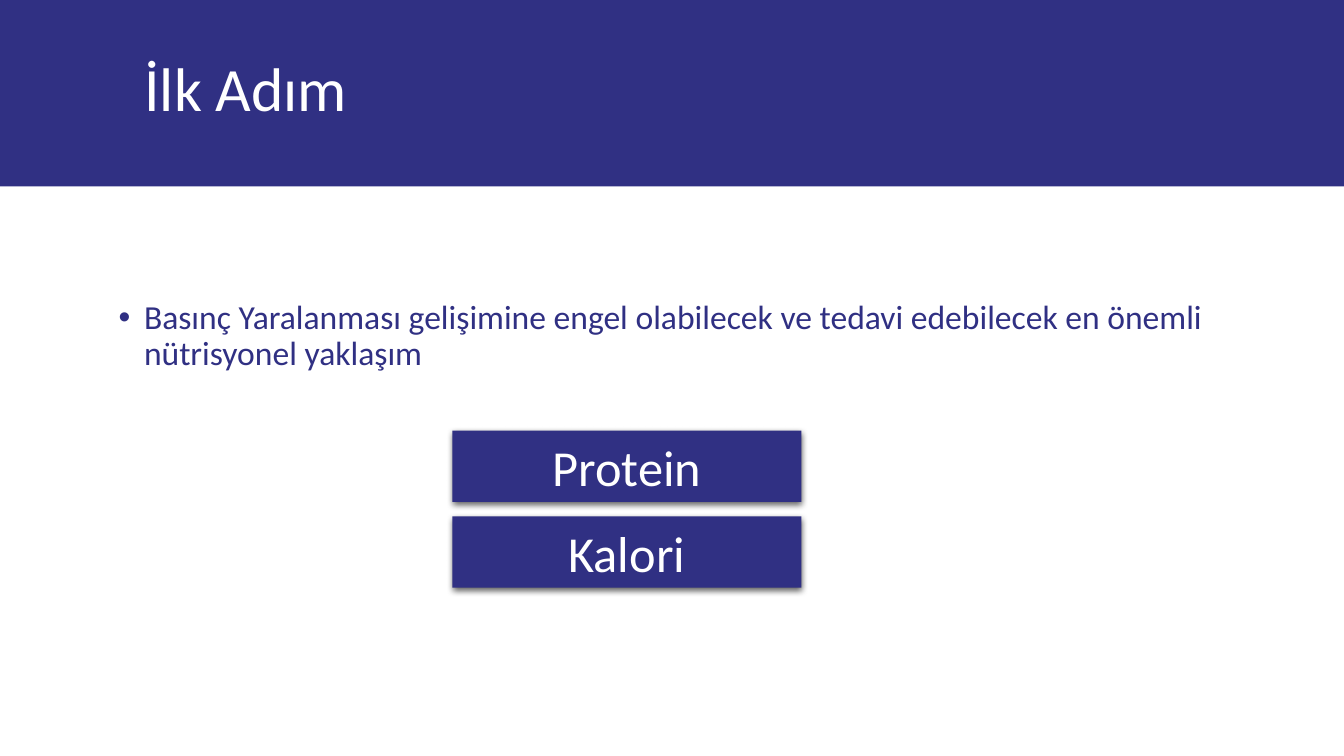
from lxml import etree
from pptx import Presentation
from pptx import util as u
from pptx.dml.color import RGBColor
from pptx.enum import shapes, text
from pptx.oxml import ns

NAVY = "303083"
WHITE = "FFFFFF"


def color(value):
    return RGBColor.from_string(value)


def style(paragraph, size, value):
    paragraph.font.name = "Calibri"
    paragraph.font.size = u.Pt(size)
    paragraph.font.color.rgb = color(value)


deck = Presentation()
deck.slide_width, deck.slide_height = u.Cm(33.87), u.Cm(19.05)
slide = deck.slides.add_slide(deck.slide_layouts[5])

heading = slide.shapes.title
heading.left, heading.top = u.Cm(0), u.Cm(0)
heading.width, heading.height = deck.slide_width, u.Cm(4.7)
heading.fill.solid()
heading.fill.fore_color.rgb = color(NAVY)
frame = heading.text_frame
frame.text = "İlk Adım"
frame.auto_size = text.MSO_AUTO_SIZE.NONE
frame.vertical_anchor = text.MSO_ANCHOR.MIDDLE
frame.margin_left, frame.margin_top = u.Cm(3.64), u.Cm(0.05)
paragraph = frame.paragraphs[0]
paragraph.alignment = text.PP_ALIGN.LEFT
paragraph.line_spacing = 0.9
style(paragraph, 44, WHITE)

approach = slide.shapes.add_textbox(u.Cm(2.74), u.Cm(7.45), u.Cm(29.21), u.Cm(2.1))
frame = approach.text_frame
frame.word_wrap = True
frame.text = (
    "Basınç Yaralanması gelişimine engel olabilecek ve tedavi edebilecek "
    "en önemli nütrisyonel yaklaşım"
)
paragraph = frame.paragraphs[0]
paragraph.line_spacing = 0.9
properties = paragraph._p.get_or_add_pPr()
properties.set("marL", str(u.Cm(0.64)))
properties.set("indent", str(u.Cm(-0.64)))
etree.SubElement(properties, ns.qn("a:buFont"), typeface="Arial")
etree.SubElement(properties, ns.qn("a:buChar"), char="•")
style(paragraph, 24, NAVY)

for row, nutrient in enumerate(["Protein", "Kalori"]):
    box = slide.shapes.add_shape(
        shapes.MSO_SHAPE.RECTANGLE,
        u.Cm(11.4), u.Cm(10.85 + row * 2.16), u.Cm(8.8), u.Cm(1.8),
    )
    box.fill.solid()
    box.fill.fore_color.rgb = color(NAVY)
    box.line.fill.background()
    box.shadow.inherit = False
    effects = box._element.spPr.find(ns.qn("a:effectLst"))
    shadow = etree.SubElement(
        effects, ns.qn("a:outerShdw"), blurRad=str(u.Pt(4.5)), dist=str(u.Pt(1.5)),
        dir="5400000", algn="ctr", rotWithShape="0",
    )
    black = etree.SubElement(shadow, ns.qn("a:srgbClr"), val="000000")
    etree.SubElement(black, ns.qn("a:alpha"), val="63000")
    frame = box.text_frame
    frame.text = nutrient
    frame.vertical_anchor = text.MSO_ANCHOR.MIDDLE
    paragraph = frame.paragraphs[0]
    paragraph.alignment = text.PP_ALIGN.CENTER
    style(paragraph, 36, WHITE)

deck.save("out.pptx")
